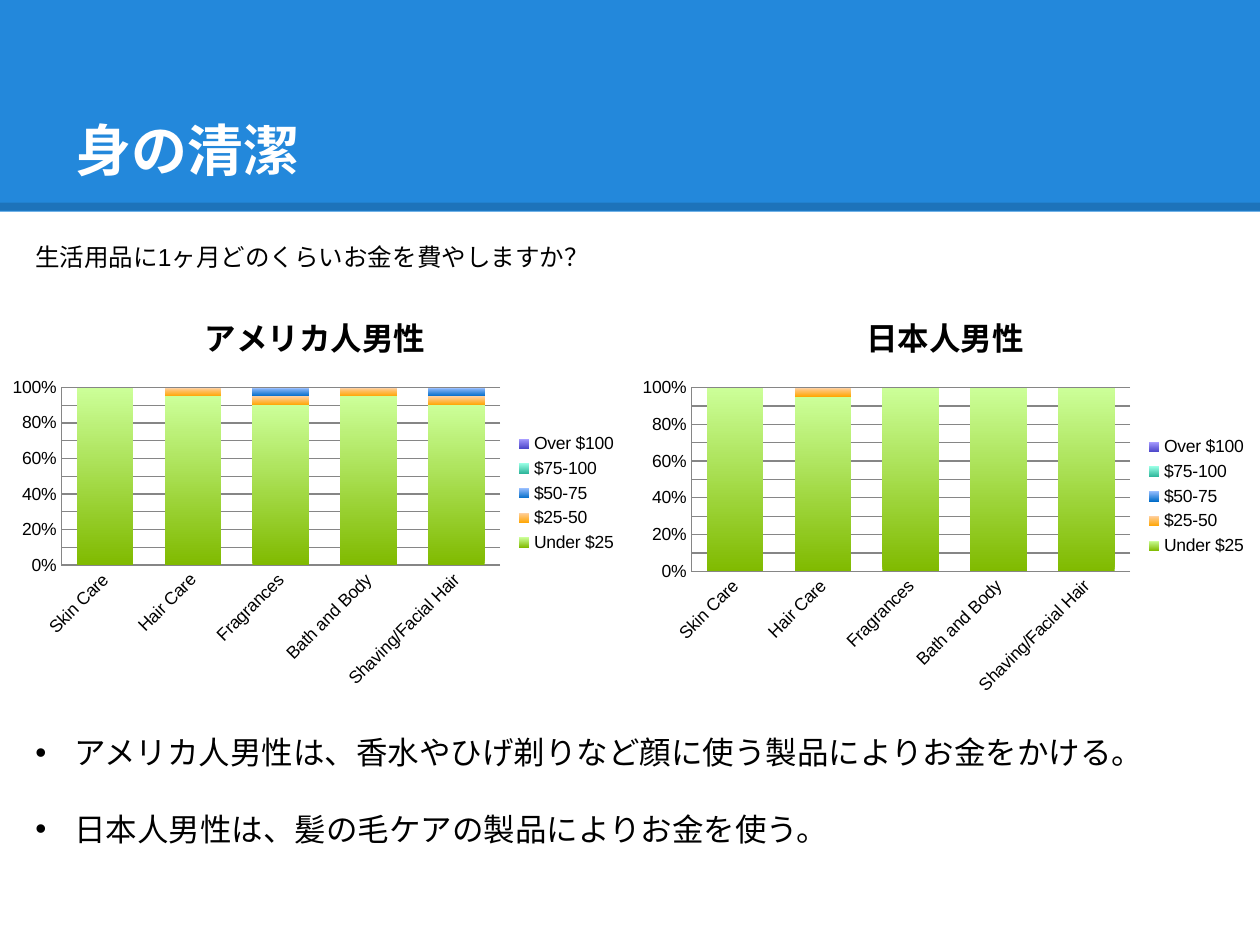
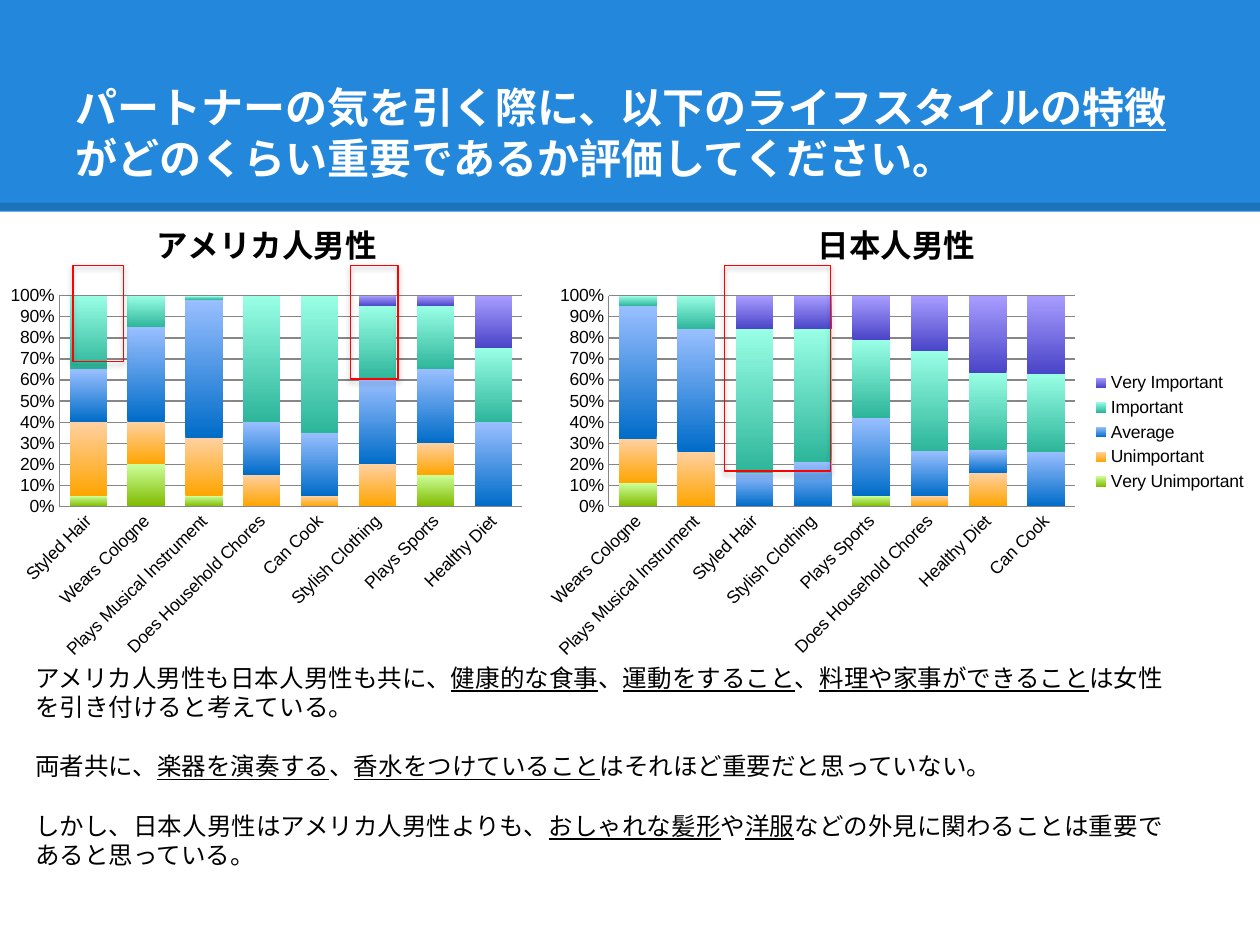
from lxml.etree import SubElement
from pptx import Presentation
from pptx.chart.data import CategoryChartData
from pptx.dml.color import RGBColor
from pptx.enum.chart import XL_CHART_TYPE, XL_LEGEND_POSITION, XL_TICK_MARK
from pptx.enum.shapes import MSO_CONNECTOR, MSO_SHAPE
from pptx.enum.text import MSO_ANCHOR, MSO_AUTO_SIZE, PP_ALIGN
from pptx.oxml.ns import qn
from pptx.util import Inches, Pt

FONT = "Arial"
COLOURS = {
    "band": "2388DB", "white": "FFFFFF", "black": "000000",
    "grid": "868686", "highlight": "FF0000",
}
# Bottom and top of each series' gradient, from the lowest answer to the highest
SERIES_GRADIENTS = [
    ("80BA00", "CCFF99"), ("FFA500", "FFD0A0"), ("006CC8", "99BFFF"),
    ("2DB59A", "99FFE5"), ("4A44C8", "A89DFF"),
]
# The slide is a grid of 100 columns by 75 rows
CELL = Inches(0.1)
COLUMNS, ROWS = 100, 75
BAND_ROWS = 16.8
MARGIN = 1.8

AMERICAN, JAPANESE = "アメリカ人男性", "日本人男性"
PRODUCTS = ["Skin Care", "Hair Care", "Fragrances", "Bath and Body", "Shaving/Facial Hair"]
NONE_SPENT = [0] * len(PRODUCTS)
AMERICAN_SPENDING = {
    "Under $25": [100, 95, 90, 95, 90],
    "$25-50": [0, 5, 5, 5, 5],
    "$50-75": [0, 0, 5, 0, 5],
    "$75-100": NONE_SPENT,
    "Over $100": NONE_SPENT,
}
JAPANESE_SPENDING = {
    "Under $25": [100, 95, 100, 100, 100],
    "$25-50": [0, 5, 0, 0, 0],
    "$50-75": NONE_SPENT,
    "$75-100": NONE_SPENT,
    "Over $100": NONE_SPENT,
}
AMERICAN_TRAITS = ["Styled Hair", "Wears Cologne", "Plays Musical Instrument",
                   "Does Household Chores", "Can Cook", "Stylish Clothing",
                   "Plays Sports", "Healthy Diet"]
AMERICAN_RATINGS = {
    "Series 1": [5, 20, 5, 0, 0, 0, 15, 0],
    "Series 2": [35, 20, 27, 15, 5, 20, 15, 0],
    "Series 3": [25, 45, 65, 25, 30, 40, 35, 40],
    "Series 4": [35, 15, 2, 60, 65, 35, 30, 35],
    "Series 5": [0, 0, 0, 0, 0, 5, 5, 25],
}
JAPANESE_TRAITS = ["Wears Cologne", "Plays Musical Instrument", "Styled Hair",
                   "Stylish Clothing", "Plays Sports", "Does Household Chores",
                   "Healthy Diet", "Can Cook"]
JAPANESE_RATINGS = {
    "Very Unimportant": [11, 0, 0, 0, 5, 0, 0, 0],
    "Unimportant": [21, 26, 0, 0, 0, 5, 16, 0],
    "Average": [63, 58, 16, 21, 37, 21, 11, 26],
    "Important": [5, 16, 68, 63, 37, 47, 37, 37],
    "Very Important": [0, 0, 16, 16, 21, 26, 37, 37],
}


def rgb(name):
    return RGBColor.from_string(COLOURS[name])


def cells(*counts):
    """Turn counts of grid cells into lengths."""
    return [int(count * CELL) for count in counts]


def move(shape, area):
    shape.left, shape.top, shape.width, shape.height = cells(*area)


def set_alpha(colour, percent):
    SubElement(colour, qn("a:alpha"), val=str(percent * 1000))


def write(frame, paragraphs, size, colour="black", bold=False, bullet=None,
          gap=0, anchor=MSO_ANCHOR.TOP, inset=0.05):
    """Fill a text frame; words between underscores are underlined."""
    frame.word_wrap = True
    frame.auto_size = MSO_AUTO_SIZE.NONE
    frame.vertical_anchor = anchor
    frame.margin_left = frame.margin_right = Inches(0.1)
    frame.margin_top = frame.margin_bottom = Inches(inset)
    for number, text in enumerate(paragraphs):
        paragraph = frame.add_paragraph() if number else frame.paragraphs[0]
        paragraph.alignment = PP_ALIGN.LEFT
        paragraph.space_before = Pt(gap if number else 0)
        indent = Inches(0.31) if bullet else 0
        properties = paragraph._p.get_or_add_pPr()
        properties.set("marL", str(indent))
        properties.set("indent", str(-indent))
        if bullet:
            SubElement(properties, qn("a:buFont"), typeface=FONT)
            SubElement(properties, qn("a:buChar"), char=bullet)
        else:
            SubElement(properties, qn("a:buNone"))
        for position, piece in enumerate(text.split("_")):
            run = paragraph.add_run()
            run.text = piece
            run.font.name, run.font.size, run.font.bold = FONT, Pt(size), bold
            run.font.color.rgb = rgb(colour)
            run.font.underline = position % 2 == 1 or None


def add_master_band(master, slide):
    """Draw the title band on a slide and hand it to the master, behind its placeholders."""
    band = slide.shapes.add_shape(MSO_SHAPE.RECTANGLE, *cells(0, 0, COLUMNS, BAND_ROWS))
    band.shadow.inherit = False
    band.fill.solid()
    band.fill.fore_color.rgb = rgb("band")
    band.line.fill.background()
    edge_row = BAND_ROWS - 0.4
    edge = slide.shapes.add_connector(
        MSO_CONNECTOR.STRAIGHT, *cells(0, edge_row, COLUMNS, edge_row))
    edge.line.width = Pt(4.5)
    edge.line.color.rgb = rgb("black")
    set_alpha(edge.element.xpath(".//a:ln//a:srgbClr")[0], 15)
    SubElement(edge.element.spPr, qn("a:effectLst"))
    for offset, part in enumerate((band, edge)):
        part.element.xpath(".//p:cNvPr")[0].set("id", str(100 + offset))
        master.shapes.element.insert(2 + offset, part.element)


def add_titled_slide(deck, title, size):
    slide = deck.slides.add_slide(deck.slide_layouts[1])
    move(slide.shapes.title, (5, 3, 90, 12.5))
    write(slide.shapes.title.text_frame, [title], size, colour="white", bold=True,
          anchor=MSO_ANCHOR.BOTTOM, inset=0.1)
    return slide


def fill_body(slide, area, paragraphs, size, **text_format):
    body = slide.placeholders[1]
    move(body, area)
    write(body.text_frame, paragraphs, size, **text_format)


def style_axis(axis):
    axis.major_tick_mark = axis.minor_tick_mark = XL_TICK_MARK.NONE
    axis.format.line.color.rgb = rgb("grid")
    axis.tick_labels.font.size = Pt(10)


def add_share_chart(slide, area, group, categories, answers, legend=True):
    """Add a 100 % stacked column chart of one group's answers."""
    data = CategoryChartData(number_format="General")
    data.categories = categories
    for answer, values in answers.items():
        data.add_series(answer, values)
    chart = slide.shapes.add_chart(
        XL_CHART_TYPE.COLUMN_STACKED_100, *cells(*area), data).chart
    chart.font.name, chart.font.size = FONT, Pt(10)
    chart.font.color.rgb = rgb("black")

    chart.has_title = True
    heading = chart.chart_title.text_frame
    heading.text = group
    font = heading.paragraphs[0].runs[0].font
    font.name, font.size, font.bold = FONT, Pt(18), True
    font.color.rgb = rgb("black")

    chart.has_legend = legend
    if legend:
        chart.legend.position = XL_LEGEND_POSITION.RIGHT
        chart.legend.include_in_layout = False

    style_axis(chart.category_axis)
    style_axis(chart.value_axis)
    chart.element.xpath(".//c:catAx/c:txPr/a:bodyPr")[0].set("rot", "-2700000")
    chart.value_axis.tick_labels.number_format = "0%"
    chart.value_axis.tick_labels.number_format_is_linked = False
    chart.value_axis.has_major_gridlines = True
    chart.value_axis.major_gridlines.format.line.color.rgb = rgb("grid")

    plot = chart.plots[0]
    plot.gap_width, plot.overlap, plot.vary_by_categories = 55, 100, False
    for series, gradient in zip(plot.series, SERIES_GRADIENTS):
        fill = series.format.fill
        fill.gradient()
        fill.gradient_angle = 90
        for stop, colour in zip(fill.gradient_stops, gradient):
            stop.color.rgb = RGBColor.from_string(colour)


def add_highlight(slide, area):
    """Frame part of a chart in red with a soft shadow below."""
    frame = slide.shapes.add_shape(MSO_SHAPE.RECTANGLE, *cells(*area))
    frame.fill.background()
    frame.line.color.rgb = rgb("highlight")
    frame.line.width = Pt(0.75)
    frame.shadow.inherit = False
    effects = frame.element.spPr.find(qn("a:effectLst"))
    shadow = SubElement(effects, qn("a:outerShdw"), blurRad=str(Pt(3.1)),
                        dist=str(Pt(1.8)), dir="5400000", rotWithShape="0")
    set_alpha(SubElement(shadow, qn("a:srgbClr"), val=COLOURS["black"]), 35)


def build_spending_slide(deck):
    slide = add_titled_slide(deck, "身の清潔", 32)
    add_master_band(deck.slide_master, slide)
    half = COLUMNS / 2
    add_share_chart(slide, (0, 23, half, 32.3), AMERICAN, PRODUCTS, AMERICAN_SPENDING)
    add_share_chart(slide, (half, 23, half, 32.8), JAPANESE, PRODUCTS, JAPANESE_SPENDING)
    question = slide.shapes.add_textbox(*cells(MARGIN, 18.7, 96.1, 3.4))
    write(question.text_frame, ["生活用品に1ヶ月どのくらいお金を費やしますか？"], 14)
    fill_body(slide, (MARGIN, 57.7, 96.1, 10.1), [
        "アメリカ人男性は、香水やひげ剃りなど顔に使う製品によりお金をかける。",
        "日本人男性は、髪の毛ケアの製品によりお金を使う。",
    ], 18, bullet="•", gap=22)


def build_lifestyle_slide(deck):
    slide = add_titled_slide(
        deck, "パートナーの気を引く際に、以下の_ライフスタイルの特徴_"
              "がどのくらい重要であるか評価してください。", 24)
    split, top, height = 42.3, 15.5, 37.6
    add_share_chart(slide, (0, top, split, height), AMERICAN,
                    AMERICAN_TRAITS, AMERICAN_RATINGS, legend=False)
    add_share_chart(slide, (split, top, COLUMNS - split, height), JAPANESE,
                    JAPANESE_TRAITS, JAPANESE_RATINGS)
    fill_body(slide, (MARGIN, 52.1, 93.2, 17.5), [
        "アメリカ人男性も日本人男性も共に、_健康的な食事_、_運動をすること_、"
        "_料理や家事ができること_は女性を引き付けると考えている。",
        "両者共に、_楽器を演奏する_、_香水をつけていること_はそれほど重要だと思っていない。",
        "しかし、日本人男性はアメリカ人男性よりも、_おしゃれな髪形_や_洋服_"
        "などの外見に関わることは重要であると思っている。",
    ], 14, gap=17)
    for left, width, rows in ((57.5, 8.4, 16.3), (27.8, 3.8, 9), (5.8, 4, 7.6)):
        add_highlight(slide, (left, 21.1, width, rows))


def main():
    deck = Presentation()
    deck.slide_width, deck.slide_height = cells(COLUMNS, ROWS)
    build_spending_slide(deck)
    build_lifestyle_slide(deck)
    deck.save("out.pptx")


if __name__ == "__main__":
    main()
